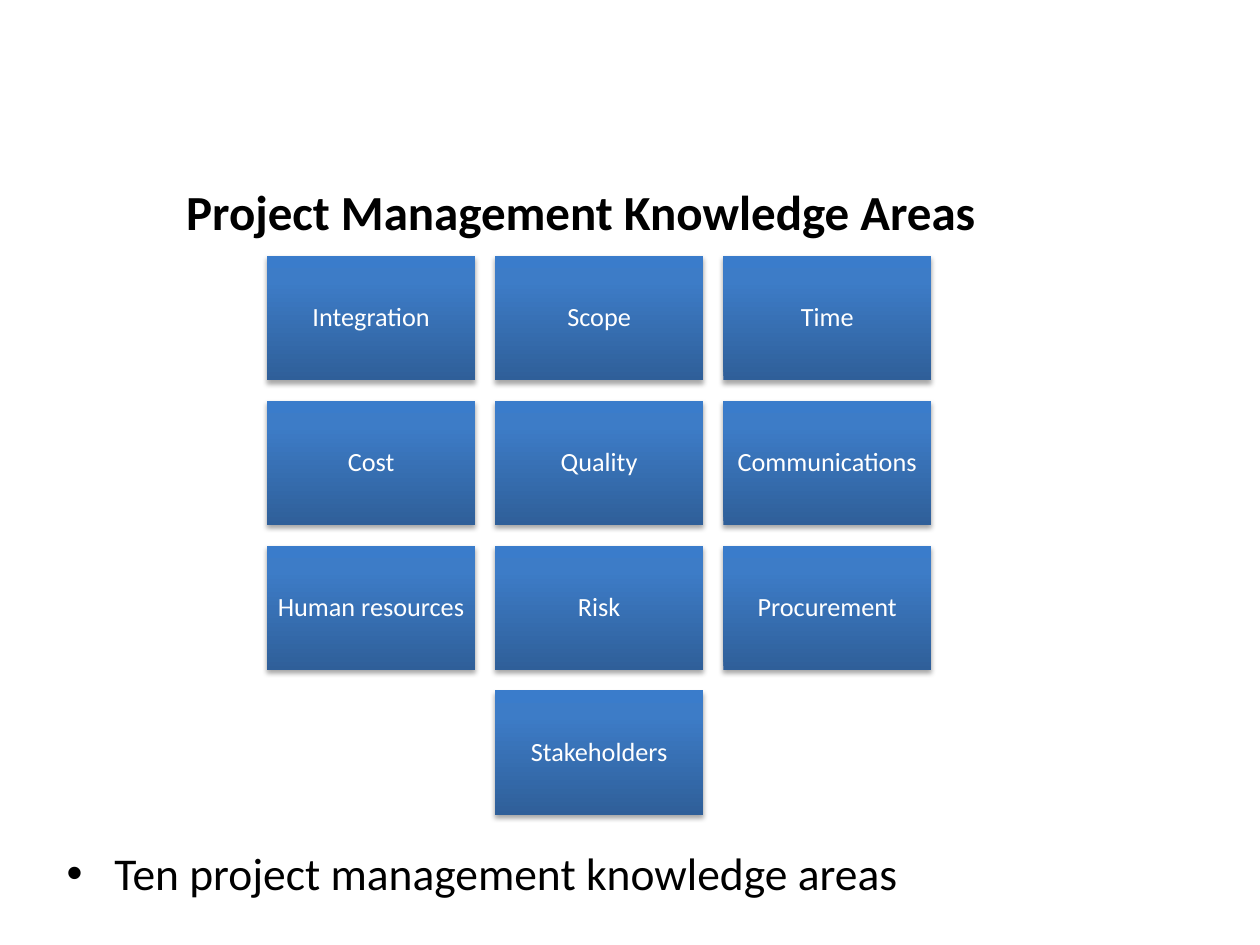
from lxml import etree
from pptx import Presentation
from pptx.dml.color import RGBColor
from pptx.enum.shapes import MSO_SHAPE
from pptx.enum.text import MSO_ANCHOR, MSO_AUTO_SIZE, PP_ALIGN
from pptx.oxml.ns import qn
from pptx.util import Inches, Pt

RECTANGLE = MSO_SHAPE.RECTANGLE
MIDDLE = MSO_ANCHOR.MIDDLE
GROW = MSO_AUTO_SIZE.SHAPE_TO_FIT_TEXT
CENTER, JUSTIFY = PP_ALIGN.CENTER, PP_ALIGN.JUSTIFY

BLACK = RGBColor(0x00, 0x00, 0x00)
WHITE = RGBColor(0xFF, 0xFF, 0xFF)
DARK_BLUE = RGBColor(0x2F, 0x5F, 0x99)
MID_BLUE = RGBColor(0x3D, 0x7C, 0xC7)
LIGHT_BLUE = RGBColor(0x3A, 0x7C, 0xCB)
TILE_STOPS = [(0, DARK_BLUE), (80, MID_BLUE), (100, LIGHT_BLUE)]

FONT = "Calibri"
COLUMNS = 3
TILE_WIDTH, TILE_HEIGHT = Inches(1.65), Inches(0.99)
AREAS = [
    "Integration", "Scope", "Time",
    "Cost", "Quality", "Communications",
    "Human resources", "Risk", "Procurement",
    "Stakeholders",
]


def style_text(para, size, color, bold=False):
    for span in para.runs:
        span.font.name = FONT
        span.font.size = Pt(size)
        span.font.bold = bold
        span.font.color.rgb = color


def add_color(parent, color):
    return etree.SubElement(parent, qn("a:srgbClr"), val=str(color))


def add_gradient(shape):
    shape.fill.gradient()
    shape.fill.gradient_angle = 90
    stops = shape._element.spPr.find(".//" + qn("a:gsLst"))
    for stop in list(stops):
        stops.remove(stop)
    for percent, color in TILE_STOPS:
        stop = etree.SubElement(stops, qn("a:gs"), pos=str(percent * 1000))
        add_color(stop, color)


def add_shadow(shape):
    shape.shadow.inherit = False
    effects = shape._element.spPr.find(qn("a:effectLst"))
    shadow = etree.SubElement(
        effects, qn("a:outerShdw"), blurRad=str(Pt(3.1)), dist=str(Pt(1.8)),
        dir="5400000", rotWithShape="0")
    etree.SubElement(add_color(shadow, BLACK), qn("a:alpha"), val="35000")


def add_tile(group, left, top, label):
    tile = group.shapes.add_shape(RECTANGLE, left, top, TILE_WIDTH, TILE_HEIGHT)
    add_gradient(tile)
    tile.line.fill.background()
    add_shadow(tile)
    frame = tile.text_frame
    frame.text = label
    frame.word_wrap = True
    frame.vertical_anchor = MIDDLE
    frame.margin_left = frame.margin_right = Inches(0.06)
    frame.margin_top = frame.margin_bottom = Inches(0.06)
    para = frame.paragraphs[0]
    para.alignment = CENTER
    para.line_spacing = 0.9
    para.space_after = Pt(5.25)
    style_text(para, 15, WHITE)


def add_tile_grid(page, left, top, width, height):
    group = page.shapes.add_group_shape()
    rows = [AREAS[i:i + COLUMNS] for i in range(0, len(AREAS), COLUMNS)]
    step_x = (width - TILE_WIDTH) // (COLUMNS - 1)
    step_y = (height - TILE_HEIGHT) // (len(rows) - 1)
    for row, labels in enumerate(rows):
        indent = (COLUMNS - len(labels)) * step_x // 2
        for column, label in enumerate(labels):
            add_tile(group, left + indent + column * step_x,
                     top + row * step_y, label)


def add_title(page, left, top, width, height):
    frame = page.shapes.add_textbox(left, top, width, height).text_frame
    frame.text = "Project Management Knowledge Areas"
    frame.word_wrap = True
    frame.auto_size = GROW
    para = frame.paragraphs[0]
    para.alignment = JUSTIFY
    style_text(para, 28, BLACK, bold=True)


def add_summary(page, left, top, width, height):
    frame = page.shapes.add_textbox(left, top, width, height).text_frame
    frame.text = "Ten project management knowledge areas"
    frame.word_wrap = True
    para = frame.paragraphs[0]
    properties = para._p.get_or_add_pPr()
    properties.set("marL", str(Inches(0.38)))
    properties.set("indent", str(-Inches(0.38)))
    etree.SubElement(properties, qn("a:buFont"), typeface="Arial")
    etree.SubElement(properties, qn("a:buChar"), char="•")
    style_text(para, 26, BLACK)


def main():
    deck = Presentation()
    deck.slide_width, deck.slide_height = Inches(10), Inches(7.5)
    page = deck.slides.add_slide(deck.slide_layouts[6])
    add_title(page, Inches(1.38), Inches(1.39), Inches(6.77), Inches(0.59))
    add_tile_grid(page, Inches(2.12), Inches(2.03), Inches(5.27), Inches(4.44))
    add_summary(page, Inches(0.43), Inches(6.66), Inches(9), Inches(0.49))
    deck.save("out.pptx")


if __name__ == "__main__":
    main()
